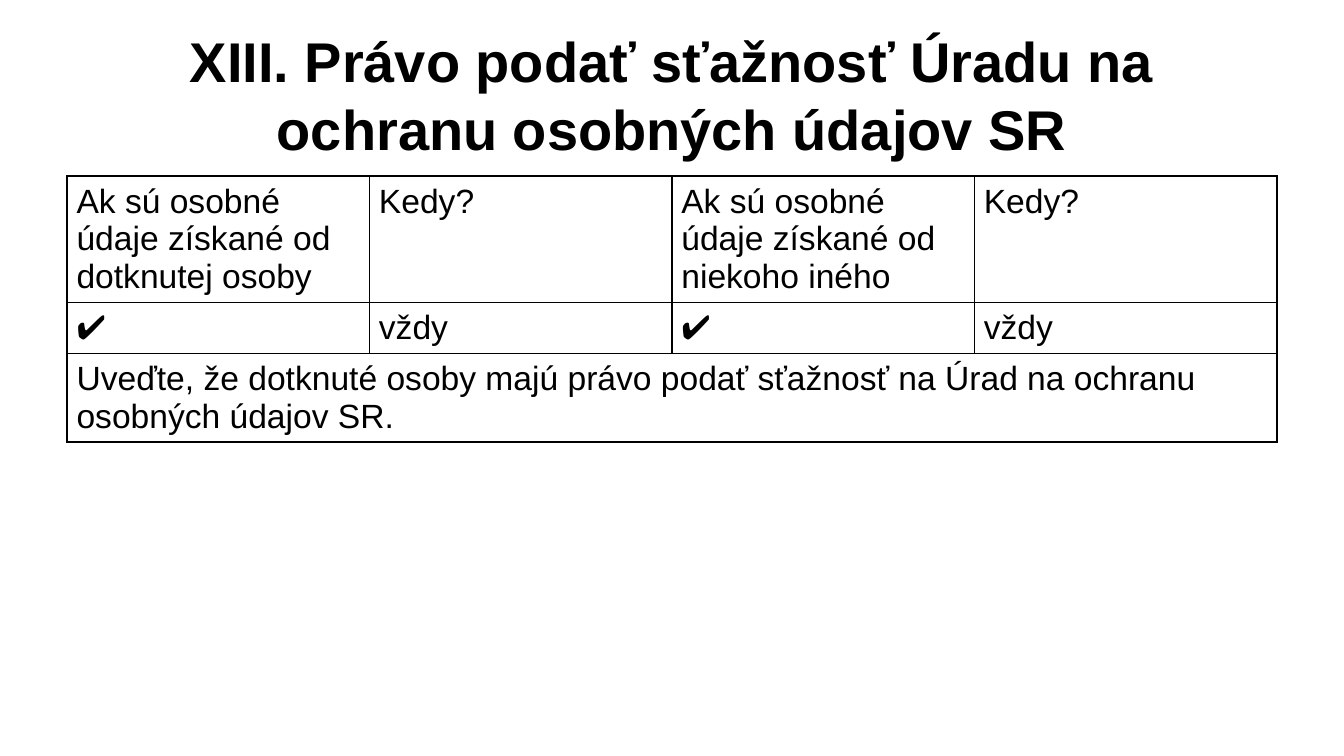
from dataclasses import dataclass

from lxml.etree import SubElement
from pptx import Presentation
from pptx.dml.color import RGBColor
from pptx.enum.text import MSO_ANCHOR, MSO_AUTO_SIZE, PP_ALIGN
from pptx.oxml.ns import qn
from pptx.util import Inches, Pt


@dataclass(frozen=True)
class Theme:
    """Font, colour and sizes used on the slide."""
    font: str = "Arial"
    ink: str = "000000"
    title_size: int = 30
    cell_size: int = 18
    border: int = 1


THEME = Theme()
TITLE = "XIII. Právo podať sťažnosť Úradu na ochranu osobných údajov SR"
ROWS = [
    ["Ak sú osobné údaje získané od dotknutej osoby", "Kedy?",
     "Ak sú osobné údaje získané od niekoho iného", "Kedy?"],
    ["✔", "vždy"] * 2,
    ["Uveďte, že dotknuté osoby majú právo podať sťažnosť na Úrad na ochranu "
     "osobných údajov SR."],
]
ROW_HEIGHTS = [0.85, 0.35, 0.55]
COL_WIDTH = 2.25


def style_paragraph(p, size, bold=False):
    """Apply the theme font to a paragraph."""
    p.font.name = THEME.font
    p.font.size = Pt(size)
    p.font.bold = bold
    p.font.color.rgb = RGBColor.from_string(THEME.ink)


def set_title(s, text):
    """Fill and place the title placeholder."""
    sp = s.shapes.title
    sp.left, sp.top, sp.width, sp.height = map(Inches, (0.5, 0.23, 9, 0.94))
    tf = sp.text_frame
    tf.text = text
    tf.word_wrap = True
    tf.auto_size = MSO_AUTO_SIZE.NONE
    tf.vertical_anchor = MSO_ANCHOR.MIDDLE
    p = tf.paragraphs[0]
    p.alignment = PP_ALIGN.CENTER
    style_paragraph(p, THEME.title_size, bold=True)


def set_borders(cell):
    """Draw a solid line on all four sides of a cell."""
    tc_pr = cell._tc.get_or_add_tcPr()
    for i, side in enumerate(("a:lnL", "a:lnR", "a:lnT", "a:lnB")):
        ln = tc_pr.makeelement(qn(side), w=str(Pt(THEME.border)))
        fill = SubElement(ln, qn("a:solidFill"))
        SubElement(fill, qn("a:srgbClr"), val=THEME.ink)
        tc_pr.insert(i, ln)


def style_cell(cell):
    """Clear the fill and set the margins and borders of a cell."""
    cell.fill.background()
    cell.margin_left = cell.margin_right = Inches(0.07)
    cell.margin_top = cell.margin_bottom = Inches(0.05)
    set_borders(cell)


def add_rights_table(s):
    """Add the bordered table with its merged last row."""
    cols = len(ROWS[0])
    table = s.shapes.add_table(
        len(ROWS), cols, Inches(0.5), Inches(1.31),
        Inches(cols * COL_WIDTH), Inches(sum(ROW_HEIGHTS))).table
    table.first_row = table.horz_banding = False
    for col in table.columns:
        col.width = Inches(COL_WIDTH)
    for row, height in zip(table.rows, ROW_HEIGHTS):
        row.height = Inches(height)
    for cell in table.iter_cells():
        style_cell(cell)
    last = len(ROWS) - 1
    table.cell(last, 0).merge(table.cell(last, cols - 1))
    for i, texts in enumerate(ROWS):
        for j, text in enumerate(texts):
            tf = table.cell(i, j).text_frame
            tf.text = text
            style_paragraph(tf.paragraphs[0], THEME.cell_size)


def main():
    """Build the widescreen slide and save it."""
    prs = Presentation()
    prs.slide_width = Inches(10)
    prs.slide_height = prs.slide_width * 9 // 16
    s = prs.slides.add_slide(prs.slide_layouts[5])
    set_title(s, TITLE)
    add_rights_table(s)
    prs.save("out.pptx")


if __name__ == "__main__":
    main()
